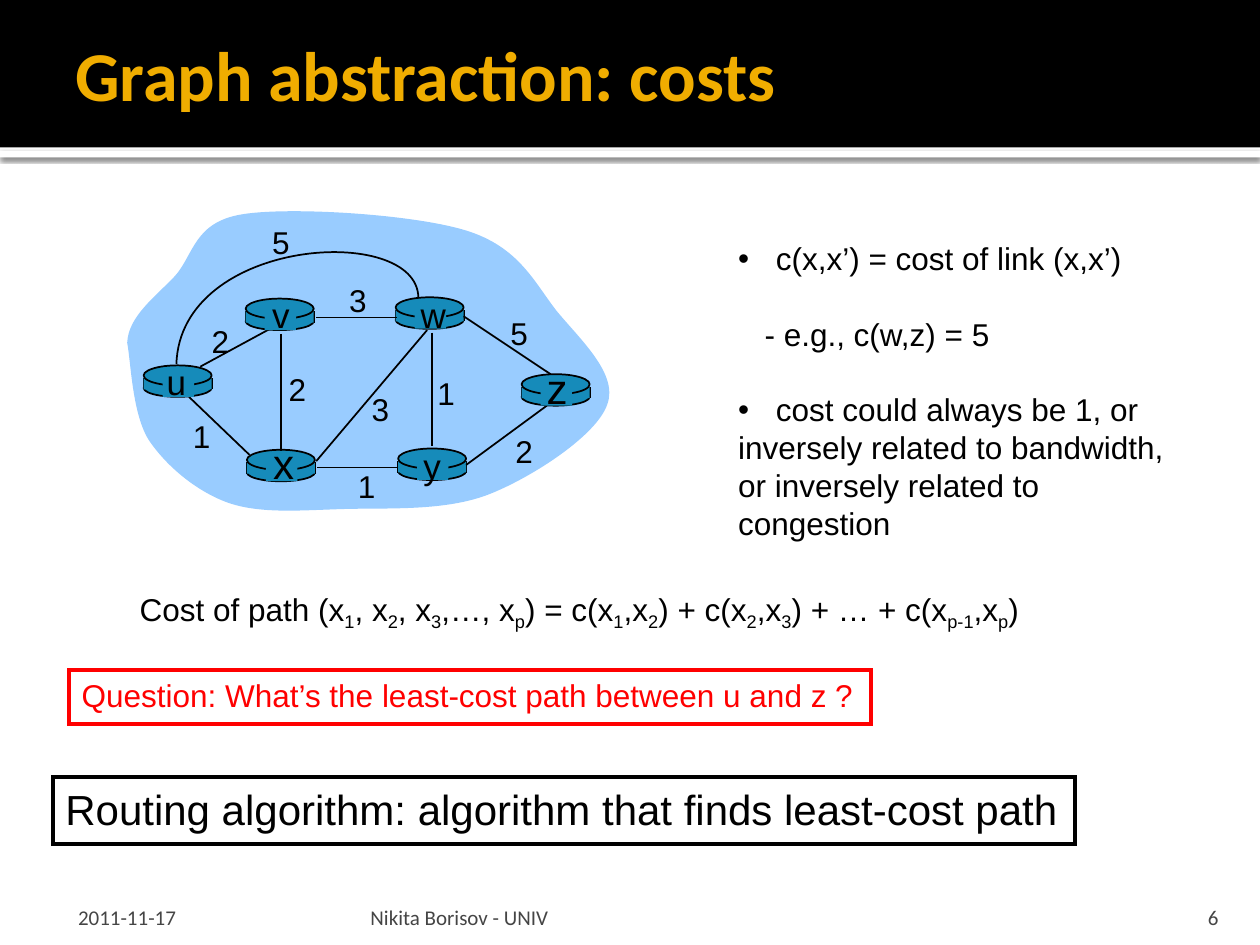
from typing import NamedTuple

from lxml import etree
from pptx import Presentation
from pptx.dml.color import RGBColor
from pptx.enum.shapes import MSO_CONNECTOR, MSO_SHAPE
from pptx.enum.text import MSO_ANCHOR, PP_ALIGN
from pptx.oxml.ns import qn
from pptx.util import Cm, Pt

BLACK, WHITE, RED, GREY = "000000", "FFFFFF", "FF0000", "454545"
GOLD, CLOUD, ROUTER = "F0AD00", "99CCFF", "168BBA"


class Router(NamedTuple):
    name: str
    x: float  # left of the body
    y: float  # top of the body
    size: int
    text_x: float  # centre of the letter
    text_y: float  # top of the letter's box


class Link(NamedTuple):
    x1: float
    y1: float
    x2: float
    y2: float


class Cost(NamedTuple):
    text: str
    x: float
    y: float


ROUTERS = [
    Router("u", 1.14, 3.0, 20, 1.4, 2.81), Router("x", 1.96, 3.67, 24, 2.25, 3.42),
    Router("v", 1.95, 2.47, 20, 2.23, 2.28), Router("w", 3.14, 2.46, 20, 3.42, 2.28),
    Router("y", 3.16, 3.66, 20, 3.43, 3.48), Router("z", 4.14, 3.07, 24, 4.42, 2.83),
]
UV_LINK = Link(1.59, 2.91, 2.18, 2.59)
LINKS = [
    Link(3.43, 2.64, 3.43, 3.54), Link(2.23, 2.65, 2.23, 3.58),
    Link(2.51, 3.66, 3.39, 2.62), Link(3.7, 3.69, 4.34, 3.22),
    Link(3.16, 3.71, 2.52, 3.71), Link(1.98, 3.61, 1.5, 3.15),
    Link(3.15, 2.52, 2.51, 2.52), Link(4.37, 2.97, 3.68, 2.51),
]
COSTS = [
    Cost("2", 1.58, 2.51), Cost("2", 2.19, 2.89), Cost("1", 1.43, 3.26),
    Cost("3", 2.85, 3.05), Cost("1", 2.74, 3.66), Cost("1", 3.37, 2.92),
    Cost("2", 3.99, 3.38), Cost("5", 3.95, 2.44), Cost("3", 2.67, 2.18),
    Cost("5", 2.06, 1.72),
]
# Cubic curves: a start point, then two controls and an end per segment
CLOUD_CURVE = [
    (1.01, 2.72), (1.02, 2.51), (1.23, 2.36), (1.39, 2.19),
    (1.54, 2.02), (1.54, 1.76), (1.93, 1.7), (2.31, 1.64), (3.28, 1.7), (3.7, 1.83),
    (4.12, 1.96), (4.24, 2.24), (4.42, 2.47), (4.61, 2.7), (4.91, 2.97), (4.82, 3.21),
    (4.74, 3.45), (4.24, 3.78), (3.89, 3.92), (3.54, 4.06), (3.08, 4.03), (2.73, 4.04),
    (2.39, 4.05), (2.07, 4.08), (1.81, 3.99), (1.56, 3.9), (1.32, 3.7), (1.18, 3.49),
    (1.05, 3.28), (1.04, 2.88), (1.01, 2.72),
]
UW_CURVE = [(3.32, 2.36), (3.31, 1.77), (1.43, 1.88), (1.4, 2.89)]


def inch(v: float) -> Cm:
    return Cm(v * 2.54)


def rgb(color: str) -> RGBColor:
    return RGBColor.from_string(color)


def paint(sp, fill: str = "", line: str = "", width: float = 1) -> None:
    sp.shadow.inherit = False
    if fill:
        sp.fill.solid()
        sp.fill.fore_color.rgb = rgb(fill)
    else:
        sp.fill.background()
    if line:
        sp.line.color.rgb = rgb(line)
        sp.line.width = Pt(width)
    else:
        sp.line.fill.background()


def add_shape(s, kind, x, y, w, h, fill="", line="", width=1.0):
    sp = s.shapes.add_shape(kind, inch(x), inch(y), inch(w), inch(h))
    paint(sp, fill, line, width)
    return sp


def add_line(s, link: Link) -> None:
    sp = s.shapes.add_connector(MSO_CONNECTOR.STRAIGHT, *map(inch, link))
    sp.line.color.rgb = rgb(BLACK)
    sp.line.width = Pt(1)
    etree.SubElement(sp._element.spPr, qn("a:effectLst"))


def add_curve(s, pts, fill="", line="") -> None:
    dots = [(inch(x), inch(y)) for x, y in pts]
    builder = s.shapes.build_freeform(*dots[0])
    builder.add_line_segments(dots[1:], close=bool(fill))
    sp = builder.convert_to_shape()
    # Turn each three line segments into one cubic segment
    steps = list(sp._element.iter(qn("a:lnTo")))
    for i in range(0, len(pts) - 1, 3):
        cubic = etree.Element(qn("a:cubicBezTo"))
        steps[i].addprevious(cubic)
        for step in steps[i:i + 3]:
            cubic.append(step[0])
            step.getparent().remove(step)
    paint(sp, fill, line)


def add_run(p, text, size, color=BLACK, font="Arial", bold=False, sub=False) -> None:
    r = p.add_run()
    r.text = text
    r.font.size, r.font.name, r.font.bold = Pt(size), font, bold
    r.font.color.rgb = rgb(color)
    if sub:
        r._r.get_or_add_rPr().set("baseline", "-25000")


def set_frame(sp, align=PP_ALIGN.LEFT, anchor=MSO_ANCHOR.TOP, wrap=False, margins=(0.1, 0.05, 0.1, 0.05)):
    tf = sp.text_frame
    tf.word_wrap, tf.vertical_anchor = wrap, anchor
    tf.margin_left, tf.margin_top, tf.margin_right, tf.margin_bottom = map(inch, margins)
    tf.paragraphs[0].alignment = align
    return tf


def add_text(s, x, y, w, h, **frame):
    return set_frame(s.shapes.add_textbox(inch(x), inch(y), inch(w), inch(h)), **frame)


def add_router(s, n: Router) -> None:
    add_shape(s, MSO_SHAPE.OVAL, n.x, n.y + 0.01, 0.54, 0.14, ROUTER, BLACK)
    for x in (n.x, n.x + 0.54):
        add_line(s, Link(x, n.y, x, n.y + 0.09))
    add_shape(s, MSO_SHAPE.RECTANGLE, n.x, n.y, 0.54, 0.09, ROUTER)
    add_shape(s, MSO_SHAPE.OVAL, n.x, n.y - 0.1, 0.54, 0.16, ROUTER, BLACK)


def add_router_name(s, n: Router) -> None:
    add_shape(s, MSO_SHAPE.RECTANGLE, n.x + 0.15, n.y - 0.08, 0.25, 0.23, ROUTER)
    h = 0.43 if n.size == 20 else 0.5
    tf = add_text(s, n.text_x - 0.18, n.text_y, 0.36, h, align=PP_ALIGN.CENTER)
    add_run(tf.paragraphs[0], n.name, n.size)


def add_box(s, x, y, w, h, text, size, color) -> None:
    sp = add_shape(s, MSO_SHAPE.RECTANGLE, x, y, w, h, line=color, width=2.25)
    etree.SubElement(sp._element.spPr.find(qn("a:ln")), qn("a:miter"), lim="800000")
    add_run(set_frame(sp).paragraphs[0], text, size, color)


prs = Presentation()
prs.slide_width, prs.slide_height = inch(10), inch(7.5)
s = prs.slides.add_slide(prs.slide_layouts[6])

# Title band with a shadowed white rule
rule = add_shape(s, MSO_SHAPE.RECTANGLE, 0, 1.2, 10, 0.05, WHITE)
effects = rule._element.spPr.find(qn("a:effectLst"))
shadow = etree.SubElement(effects, qn("a:outerShdw"), blurRad=str(Pt(2.5)),
                          dist=str(Pt(0.8)), dir="5400000", rotWithShape="0")
shade = etree.SubElement(shadow, qn("a:srgbClr"), val=BLACK)
etree.SubElement(shade, qn("a:alpha"), val="60000")
add_shape(s, MSO_SHAPE.RECTANGLE, 0, 0, 10, 1.17, BLACK)
tf = add_text(s, 0.5, 0.08, 9, 1, anchor=MSO_ANCHOR.MIDDLE, wrap=True)
add_run(tf.paragraphs[0], "Graph abstraction: costs", 40, GOLD, "Calibri", bold=True)

# Network graph
add_curve(s, CLOUD_CURVE, fill=CLOUD)
add_line(s, UV_LINK)
for router in ROUTERS:
    add_router(s, router)
for link in LINKS:
    add_line(s, link)
add_curve(s, UW_CURVE, line=BLACK)
for router in ROUTERS:
    add_router_name(s, router)
for cost in COSTS:
    tf = add_text(s, cost.x, cost.y, 0.34, 0.4, align=PP_ALIGN.CENTER)
    add_run(tf.paragraphs[0], cost.text, 18)

# Notes on link cost: text, left indent, bullet, gap before
NOTES = [
    ("c(x,x’) = cost of link (x,x’)", 0.3, True, 0),
    ("- e.g., c(w,z) = 5", 0.21, False, 21.6),
    ("cost could always be 1, or", 0.3, True, 21.6),
    ("inversely related to bandwidth,", 0, False, 0),
    ("or inversely related to", 0, False, 0),
    ("congestion", 0, False, 0),
]
tf = add_text(s, 5.76, 1.85, 3.58, 2.5)
for i, (text, indent, bullet, gap) in enumerate(NOTES):
    p = tf.add_paragraph() if i else tf.paragraphs[0]
    p.space_before = Pt(gap)
    pPr = p._p.get_or_add_pPr()
    pPr.set("marL", str(inch(indent)))
    pPr.set("indent", str(-inch(indent) if bullet else 0))
    if bullet:
        etree.SubElement(pPr, qn("a:buFont"), typeface="Arial")
        etree.SubElement(pPr, qn("a:buChar"), char="•")
    add_run(p, text, 18)

# Path cost formula: every second piece is a subscript
FORMULA = "Cost of path (x|1|, x|2|, x|3|,…, x|p|) = c(x|1|,x|2|) + c(x|2|,x|3|) + … + c(x|p-1|,x|p|)"
p = add_text(s, 1.01, 4.63, 7.46, 0.4).paragraphs[0]
for i, piece in enumerate(FORMULA.split("|")):
    add_run(p, piece, 18, sub=i % 2 == 1)

# Framed statements
add_box(s, 0.55, 5.32, 6.36, 0.43, "Question: What’s the least-cost path between u and z ?", 18, RED)
add_box(s, 0.42, 6.17, 8.11, 0.53, "Routing algorithm: algorithm that finds least-cost path", 24, BLACK)

# Footer
for text, x, w, left, align in [
    ("2011-11-17", 0.5, 2.33, 0.12, PP_ALIGN.LEFT),
    ("Nikita Borisov - UNIV", 2.89, 6.02, 0.05, PP_ALIGN.LEFT),
    ("6", 8.97, 0.8, 0.1, PP_ALIGN.RIGHT),
]:
    tf = add_text(s, x, 7.08, w, 0.3, align=align, anchor=MSO_ANCHOR.BOTTOM,
                  wrap=True, margins=(left, 0.05, 0.1, 0))
    add_run(tf.paragraphs[0], text, 12, GREY, "Calibri")

prs.save("out.pptx")
